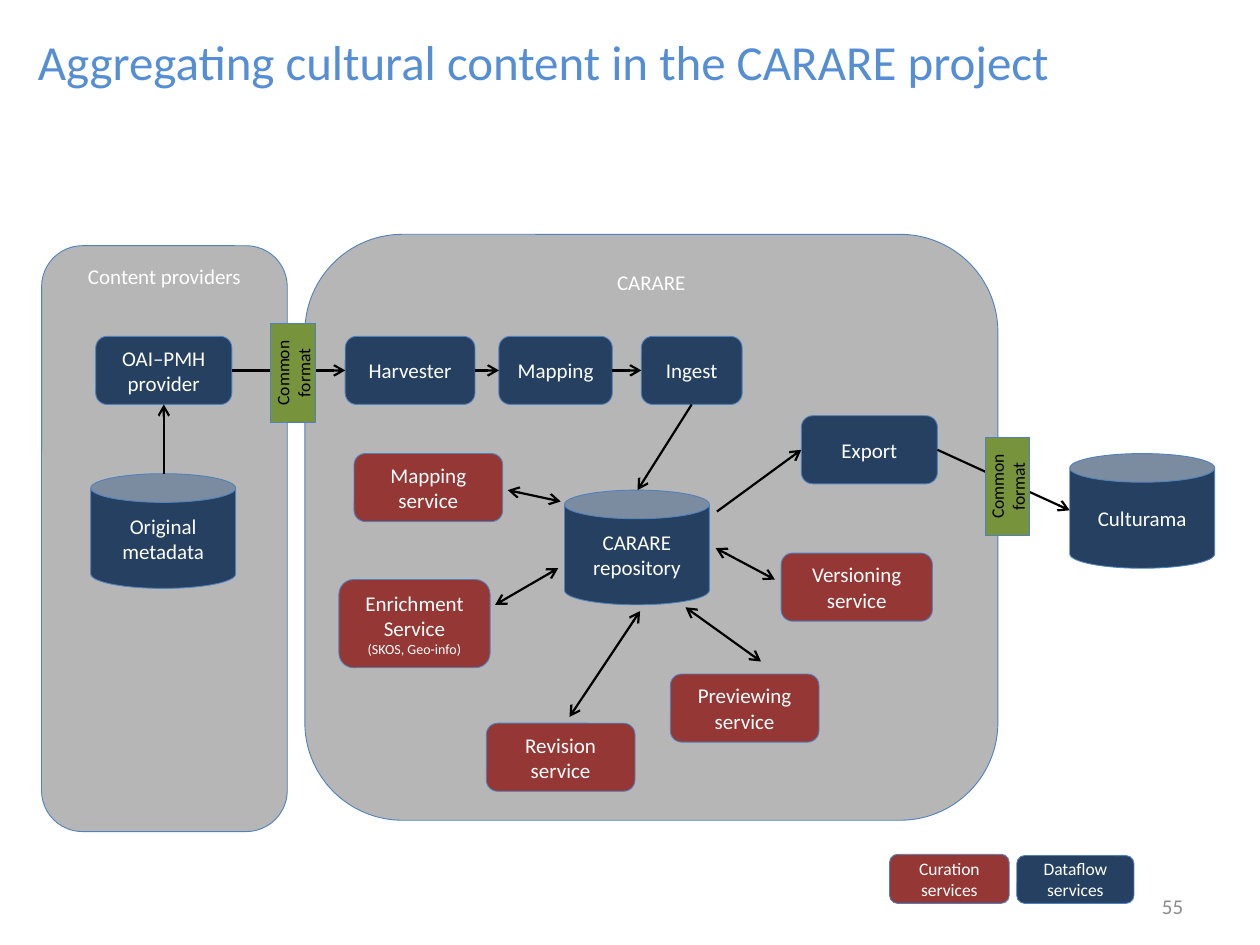
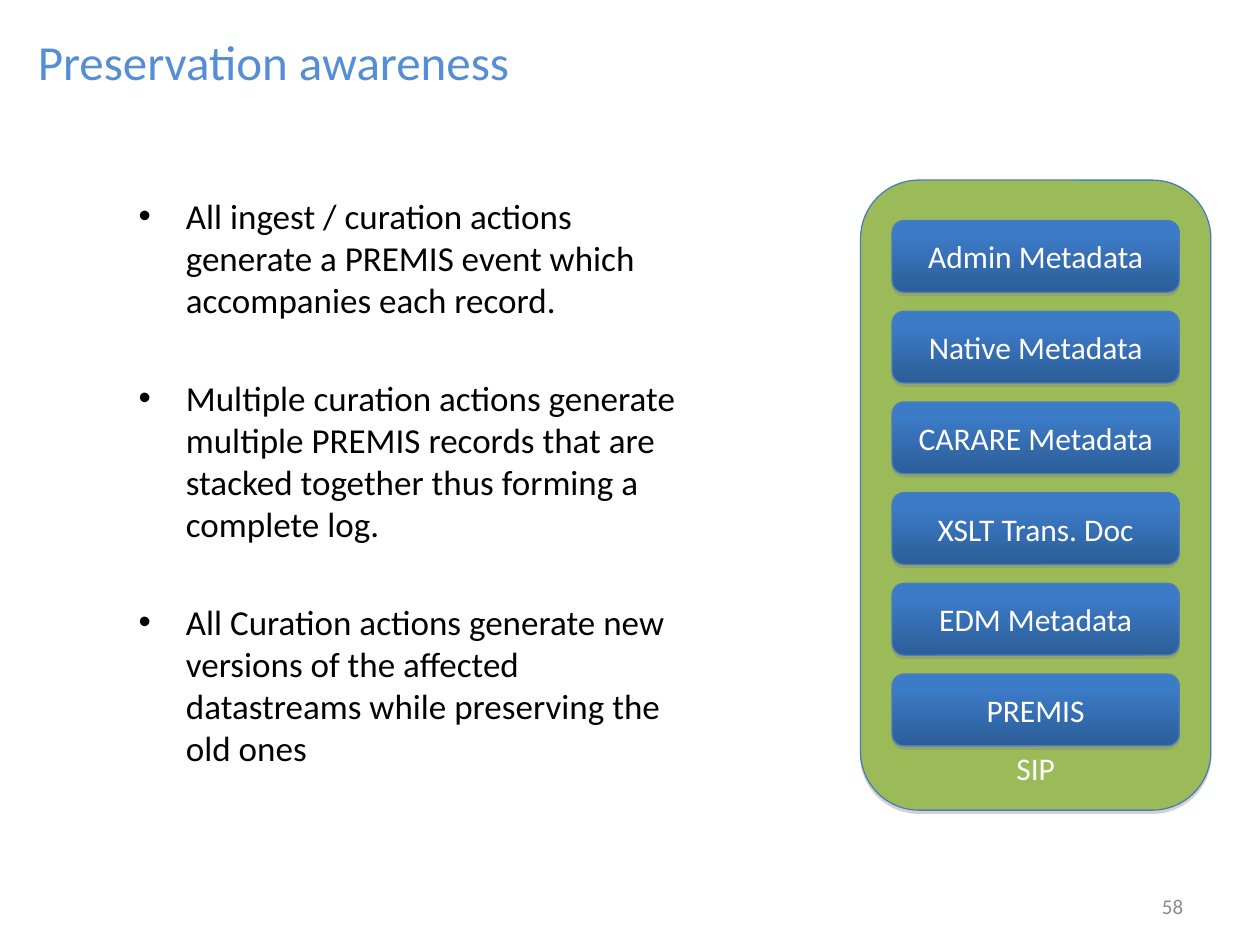
from pptx import Presentation
from pptx.dml.color import RGBColor
from pptx.enum.shapes import MSO_CONNECTOR as Wire, MSO_SHAPE as Kind
from pptx.enum.text import MSO_ANCHOR as Anchor, MSO_AUTO_SIZE as Fit, PP_ALIGN as Align
from pptx.oxml.ns import qn
from pptx.util import Inches, Pt
from lxml.etree import SubElement

FONT = "Calibri"
BLACK, WHITE, GRAY = "000000", "FFFFFF", "808080"
NAVY, RED, OLIVE, LEAF = "254061", "953735", "77933C", "9BBB59"
EDGE, RIM, HEAD, FADED = "4F81BD", "4A7EBB", "558ED5", "8C8C8C"
SHEEN = ("3C7BC7", "2C5D98")
TOP, LEFT, BASE, RIGHT = range(4)

FLOW = {
    "title": "Aggregating cultural content in the CARARE project",
    "page": "55",
    "zones": [
        ("Content providers", (0.33, 1.95, 1.95, 4.65)),
        ("CARARE", (2.42, 1.86, 5.5, 4.65)),
    ],
    "stores": [
        ("Original metadata", 0.72, 3.76),
        ("CARARE repository", 4.48, 3.89),
        ("Culturama", 8.49, 3.6),
    ],
    "steps": [
        ("OAI–PMH provider", NAVY, (0.76, 2.67, 1.08, 0.54), 12),
        ("Harvester", NAVY, (2.74, 2.67, 1.03, 0.54), 12),
        ("Mapping", NAVY, (3.96, 2.67, 0.9, 0.54), 12),
        ("Ingest", NAVY, (5.09, 2.67, 0.8, 0.54), 12),
        ("Export", NAVY, (6.36, 3.3, 1.08, 0.54), 12),
        ("Mapping service", RED, (2.81, 3.6, 1.18, 0.54), 12),
        ("Enrichment\nService\n(SKOS, Geo-info)", RED, (2.69, 4.6, 1.2, 0.7), 12),
        ("Versioning service", RED, (6.2, 4.39, 1.2, 0.54), 12),
        ("Revision\nservice", RED, (3.86, 5.74, 1.18, 0.54), 12),
        ("Previewing\nservice", RED, (5.32, 5.35, 1.18, 0.54), 12),
        ("Curation services", RED, (7.06, 6.78, 0.95, 0.39), 10),
        ("Dataflow services", NAVY, (8.07, 6.79, 0.93, 0.38), 10),
    ],
    "links": [
        ((1.3, 3.76), ("OAI–PMH provider", BASE)),
        (("OAI–PMH provider", RIGHT), ("Harvester", LEFT)),
        (("Harvester", RIGHT), ("Mapping", LEFT)),
        (("Mapping", RIGHT), ("Ingest", LEFT)),
        (("Ingest", BASE), (5.06, 3.89)),
        ((5.69, 4.06), ("Export", LEFT)),
        (("Export", RIGHT), (8.49, 4.05)),
    ],
    "swaps": [
        ((4.03, 3.89), (4.45, 3.98)),
        ((3.93, 4.8), (4.43, 4.51)),
        ((4.52, 5.69), (5.08, 4.85)),
        ((6.04, 5.25), (5.44, 4.82)),
        ((5.68, 4.35), (6.15, 4.6)),
    ],
    "tags": [(2.15, 2.57), (7.82, 3.47)],
    "tag": "Common\nformat",
}
KEEP = {
    "title": "Preservation awareness",
    "page": "58",
    "points": [
        "All ingest / curation actions generate a PREMIS event which accompanies each record.",
        "Multiple curation actions generate multiple PREMIS records that are stacked together "
        "thus forming a complete log.",
        "All Curation actions generate new versions of the affected datastreams "
        "while preserving the old ones",
    ],
    "pack": "SIP",
    "parts": ["Admin Metadata", "Native Metadata", "CARARE Metadata",
              "XSLT Trans. Doc", "EDM Metadata", "PREMIS"],
}


def rgb(code):
    """Turn a hex string into a colour."""
    return RGBColor.from_string(code)


def box(*nums):
    """Turn numbers into lengths in inches."""
    return [Inches(n) for n in nums]


def style(frame, size, color, align=Align.CENTER, anchor=Anchor.MIDDLE):
    """Format all the text of a frame."""
    frame.word_wrap = True
    frame.auto_size = Fit.NONE
    frame.vertical_anchor = anchor
    for para in frame.paragraphs:
        para.alignment = align
        for run in para.runs:
            run.font.name = FONT
            run.font.size = Pt(size)
            run.font.color.rgb = rgb(color)


def block(slide, kind, text, fill, area, size, color=WHITE, anchor=Anchor.MIDDLE,
          edge=(EDGE, 0.5)):
    """Add a filled shape with text."""
    shape = slide.shapes.add_shape(kind, *box(*area))
    shape.shadow.inherit = False
    shape.fill.solid()
    shape.fill.fore_color.rgb = rgb(fill)
    shape.line.color.rgb = rgb(edge[0])
    shape.line.width = Pt(edge[1])
    shape.text_frame.text = text
    style(shape.text_frame, size, color, anchor=anchor)
    return shape


def fade(shape, share):
    """Make the fill of a shape partly clear."""
    tint = shape.element.spPr.find(qn("a:solidFill"))[0]
    SubElement(tint, qn("a:alpha"), val=str(share * 1000))


def shade(shape):
    """Drop a thin shadow below a shape."""
    list_ = shape.element.spPr.find(qn("a:effectLst"))
    drop = SubElement(list_, qn("a:outerShdw"), blurRad="0", dist=str(Pt(1.8)),
                      dir="5400000", rotWithShape="0")
    tint = SubElement(drop, qn("a:srgbClr"), val=GRAY)
    SubElement(tint, qn("a:alpha"), val="35000")


def link(slide, nodes, start, end, ends=("tailEnd",)):
    """Draw an arrow between points or sides of nodes."""
    spots = [(0, 0) if isinstance(s[0], str) else s for s in (start, end)]
    wire = slide.shapes.add_connector(Wire.STRAIGHT, *box(*spots[0], *spots[1]))
    for spot, join in ((start, wire.begin_connect), (end, wire.end_connect)):
        if isinstance(spot[0], str):
            join(nodes[spot[0]], spot[1])
    wire.line.color.rgb = rgb(BLACK)
    wire.line.width = Pt(1.25)
    props = wire.element.spPr
    for tip in ends:
        SubElement(props.find(qn("a:ln")), qn("a:" + tip), type="arrow")
    SubElement(props, qn("a:effectLst"))


def start(deck, layout, data):
    """Add a slide with its title and page number."""
    slide = deck.slides.add_slide(deck.slide_layouts[layout])
    title = slide.shapes.title
    title.left, title.top, title.width, title.height = box(0.2, 0.05, 9.45, 0.87)
    title.text_frame.text = data["title"]
    style(title.text_frame, 28, HEAD, Align.LEFT)
    page = slide.shapes.add_textbox(*box(8.86, 7.01, 0.63, 0.36))
    page.text_frame.text = data["page"]
    style(page.text_frame, 12, FADED, Align.RIGHT)
    return slide


def draw_flow(deck):
    """Build the diagram of the data flow."""
    slide = start(deck, 5, FLOW)
    for text, area in FLOW["zones"]:
        fade(block(slide, Kind.ROUNDED_RECTANGLE, text, GRAY, area, 12, anchor=Anchor.TOP), 57)
    for text, x, y in FLOW["stores"]:
        block(slide, Kind.CAN, text, NAVY, (x, y, 1.15, 0.91), 12)
    nodes = {}
    for text, fill, area, size in FLOW["steps"]:
        nodes[text] = block(slide, Kind.ROUNDED_RECTANGLE, text, fill, area, size)
        for para in nodes[text].text_frame.paragraphs:
            if para.text.startswith("("):
                para.runs[0].font.size = Pt(8)
    for pair in FLOW["links"]:
        link(slide, nodes, *pair)
    for pair in FLOW["swaps"]:
        link(slide, nodes, *pair, ends=("headEnd", "tailEnd"))
    for x, y in FLOW["tags"]:
        tag = block(slide, Kind.RECTANGLE, FLOW["tag"], OLIVE, (x, y, 0.35, 0.78), 10, BLACK)
        tag.text_frame._txBody.find(qn("a:bodyPr")).set("vert", "vert270")


def draw_keep(deck):
    """Build the list and the stack of metadata."""
    slide = start(deck, 1, KEEP)
    body = slide.placeholders[1]
    body.left, body.top, body.width, body.height = box(1, 1.49, 4.58, 5.49)
    body.text_frame.text = "\n".join(KEEP["points"])
    style(body.text_frame, 20, BLACK, Align.LEFT, Anchor.TOP)
    for i, para in enumerate(body.text_frame.paragraphs):
        para.space_before = Pt(32 if i else 0)
    rim = (RIM, 0.75)
    shade(block(slide, Kind.ROUNDED_RECTANGLE, KEEP["pack"], LEAF, (6.83, 1.43, 2.78, 5), 18,
                anchor=Anchor.BOTTOM, edge=rim))
    for i, text in enumerate(KEEP["parts"]):
        bar = block(slide, Kind.ROUNDED_RECTANGLE, text, SHEEN[0],
                    (7.08, 1.75 + 0.72 * i, 2.28, 0.57), 18, edge=rim)
        bar.fill.gradient()
        bar.fill.gradient_angle = 270
        for stop, spot, tint in zip(bar.fill.gradient_stops, (0.2, 1), SHEEN):
            stop.position = spot
            stop.color.rgb = rgb(tint)
        shade(bar)


def main():
    """Build and save the deck."""
    deck = Presentation()
    deck.slide_width, deck.slide_height = box(10, 7.5)
    draw_flow(deck)
    draw_keep(deck)
    deck.save("out.pptx")


if __name__ == "__main__":
    main()
